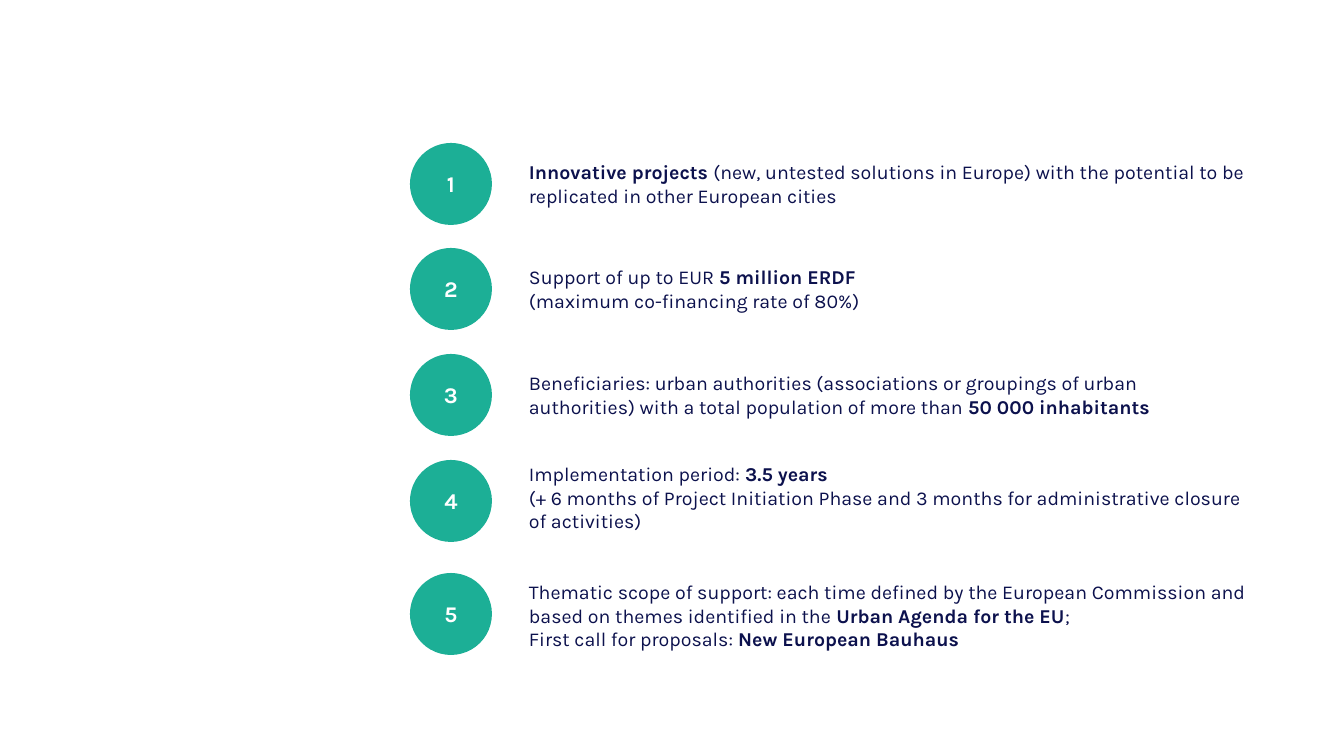
from pptx import Presentation
from pptx.dml.color import RGBColor
from pptx.enum.shapes import MSO_SHAPE
from pptx.enum.text import MSO_ANCHOR, MSO_AUTO_SIZE, PP_ALIGN
from pptx.util import Emu, Pt

OVAL = MSO_SHAPE.OVAL
MIDDLE = MSO_ANCHOR.MIDDLE
CENTER = PP_ALIGN.CENTER
GROW = MSO_AUTO_SIZE.SHAPE_TO_FIT_TEXT

EMU_PER_PX = 914400 / 100.8
PAGE_WIDTH, PAGE_HEIGHT = 1344, 756
CIRCLE_LEFT, CIRCLE_SIZE = 410, 82
TEXT_LEFT = 519
FONT = "Karla"
COLORS = {"circle": "1CAF96", "number": "FFFFFF", "text": "0C114D"}

# Each fact: circle top, text top, text width, text height,
# paragraphs of (words, bold) runs
FACTS = [
    (143, 155, 739, 57, [
        [("Innovative projects ", True),
         ("(new, untested solutions in Europe) with the potential to be "
          "replicated in other European cities", False)],
    ]),
    (248, 260, 555, 57, [
        [("Support of up to EUR ", False), ("5 million ERDF", True)],
        [("(maximum co-financing rate of 80%)", False)],
    ]),
    (354, 366, 663, 57, [
        [("Beneficiaries: urban authorities (associations or groupings of urban "
          "authorities) with a total population of more than ", False),
         ("50 000 inhabitants", True)],
    ]),
    (460, 457, 739, 82, [
        [("Implementation period: ", False), ("3.5 years", True)],
        [("(+ 6 months of Project Initiation Phase and 3 months for "
          "administrative closure of activities)", False)],
    ]),
    (573, 575, 739, 82, [
        [("Thematic scope of support: each time defined by the European "
          "Commission and based on themes identified in the ", False),
         ("Urban Agenda for the EU", True), (";", False)],
        [("First call for proposals: ", False), ("New European Bauhaus", True)],
    ]),
]


def px(*lengths):
    return [Emu(round(length * EMU_PER_PX)) for length in lengths]


def add_span(para, words, size, color, bold):
    span = para.add_run()
    span.text = words
    span.font.name = FONT
    span.font.size = Pt(size)
    span.font.bold = bold
    span.font.color.rgb = RGBColor.from_string(COLORS[color])


def add_number(group, number, top):
    circle = group.shapes.add_shape(
        OVAL, *px(CIRCLE_LEFT, top, CIRCLE_SIZE, CIRCLE_SIZE))
    circle.shadow.inherit = False
    circle.fill.solid()
    circle.fill.fore_color.rgb = RGBColor.from_string(COLORS["circle"])
    circle.line.fill.background()
    circle.text_frame.vertical_anchor = MIDDLE
    para = circle.text_frame.paragraphs[0]
    para.alignment = CENTER
    add_span(para, str(number), 16, "number", True)


def add_description(group, top, width, height, paragraphs):
    box = group.shapes.add_textbox(*px(TEXT_LEFT, top, width, height))
    frame = box.text_frame
    frame.word_wrap = True
    frame.auto_size = GROW
    for index, spans in enumerate(paragraphs):
        para = frame.add_paragraph() if index else frame.paragraphs[0]
        for words, bold in spans:
            add_span(para, words, 14, "text", bold)


def main():
    deck = Presentation()
    deck.slide_width, deck.slide_height = px(PAGE_WIDTH, PAGE_HEIGHT)
    page = deck.slides.add_slide(deck.slide_layouts[6])

    # One group per fact: numbered circle and its description
    for number, (circle_top, *description) in enumerate(FACTS, start=1):
        group = page.shapes.add_group_shape()
        add_number(group, number, circle_top)
        add_description(group, *description)

    deck.save("out.pptx")


if __name__ == "__main__":
    main()
